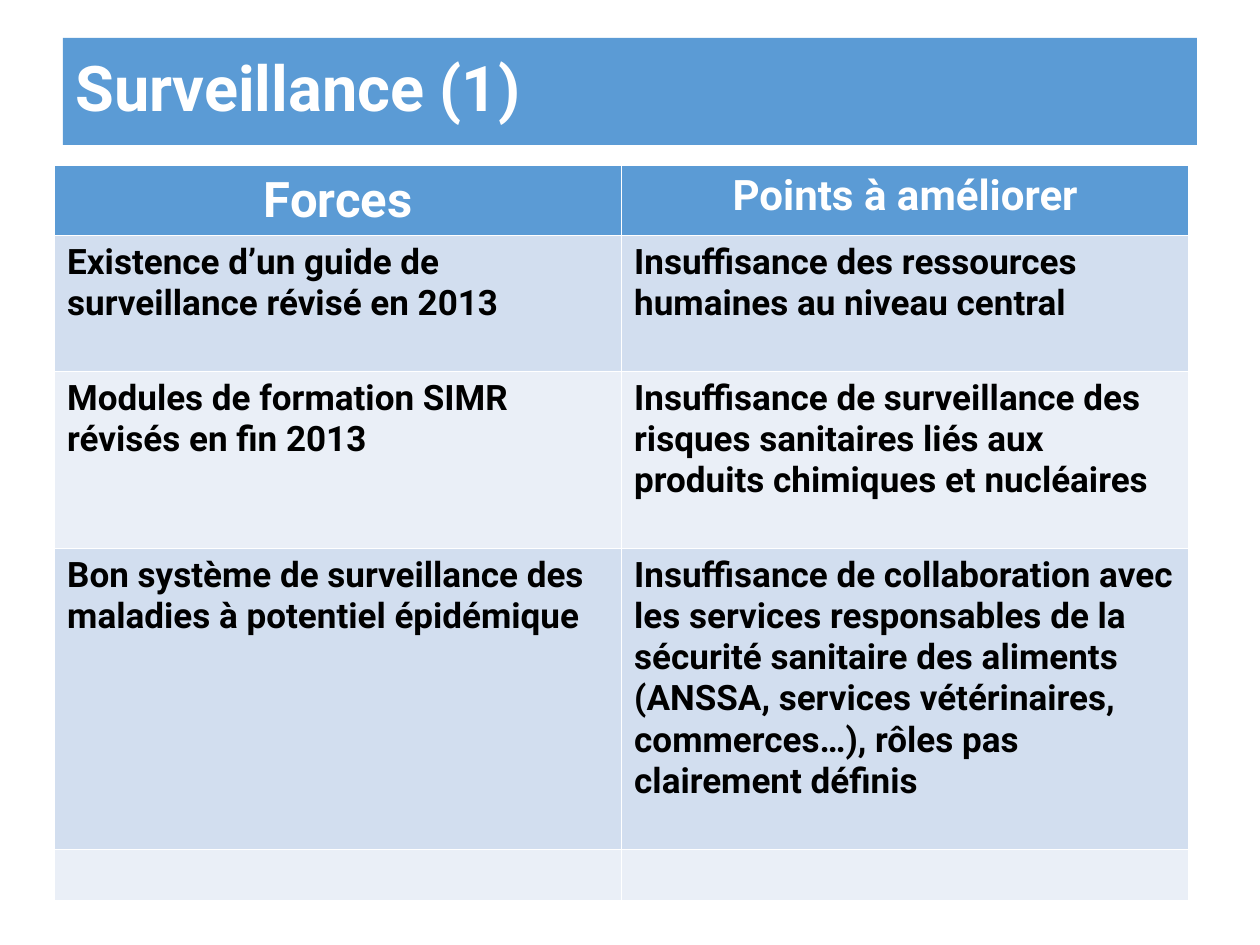
"""Build the surveillance slide: a title bar above a table of strengths and weak points."""
from pptx import Presentation
from pptx.dml.color import RGBColor
from pptx.enum import shapes, text
from pptx.util import Pt

TITLE = "Surveillance (1)"
HEAD = [("Forces", 28), ("Points à améliorer", 24)]
ROWS = [
    ("Existence d’un guide de surveillance révisé en 2013",
     "Insuffisance des ressources humaines au niveau central"),
    ("Modules de formation SIMR révisés en fin 2013",
     "Insuffisance de surveillance des risques sanitaires liés aux "
     "produits chimiques et nucléaires"),
    ("Bon système de surveillance des maladies à potentiel épidémique",
     "Insuffisance de collaboration avec les services responsables de la "
     "sécurité sanitaire des aliments (ANSSA, services vétérinaires, "
     "commerces…), rôles pas clairement définis"),
    ("", ""),
]
HIGH = [39.4, 77.7, 101.2, 172, 29.5]
WIDE = 324
COLORS = {"blue": "5B9BD5", "dark": "D2DEEF", "light": "EAEFF7",
          "white": "FFFFFF", "black": "000000"}


def paint(fill, name):
    fill.solid()
    fill.fore_color.rgb = RGBColor.from_string(COLORS[name])


def write(frame, words, size, color, align):
    para = frame.paragraphs[0]
    para.text = words
    para.alignment = align
    font = para.font
    font.name, font.size, font.bold = "Roboto", Pt(size), True
    font.color.rgb = RGBColor.from_string(COLORS[color])
    return para


def main():
    deck = Presentation()
    deck.slide_width, deck.slide_height = Pt(720), Pt(540)
    slide = deck.slides.add_slide(deck.slide_layouts[6])
    left, center = text.PP_ALIGN.LEFT, text.PP_ALIGN.CENTER

    bar = slide.shapes.add_shape(
        shapes.MSO_SHAPE.RECTANGLE, Pt(36), Pt(21.6), Pt(648), Pt(61.2))
    bar.shadow.inherit = False
    paint(bar.fill, "blue")
    bar.line.fill.background()
    bar.text_frame.vertical_anchor = text.MSO_ANCHOR.MIDDLE
    write(bar.text_frame, TITLE, 36, "white", left).line_spacing = 0.9

    table = slide.shapes.add_table(
        len(HIGH), len(HEAD), Pt(31.2), Pt(94.6),
        Pt(WIDE * len(HEAD)), Pt(sum(HIGH))).table
    for row, high in zip(table.rows, HIGH):
        row.height = Pt(high)
    for col, (words, size) in enumerate(HEAD):
        table.columns[col].width = Pt(WIDE)
        cell = table.cell(0, col)
        paint(cell.fill, "blue")
        write(cell.text_frame, words, size, "white", center)
    for num, row in enumerate(ROWS, 1):
        for col, words in enumerate(row):
            cell = table.cell(num, col)
            paint(cell.fill, "dark" if num % 2 else "light")
            if words:
                write(cell.text_frame, words, 20, "black", left)

    deck.save("out.pptx")


if __name__ == "__main__":
    main()
